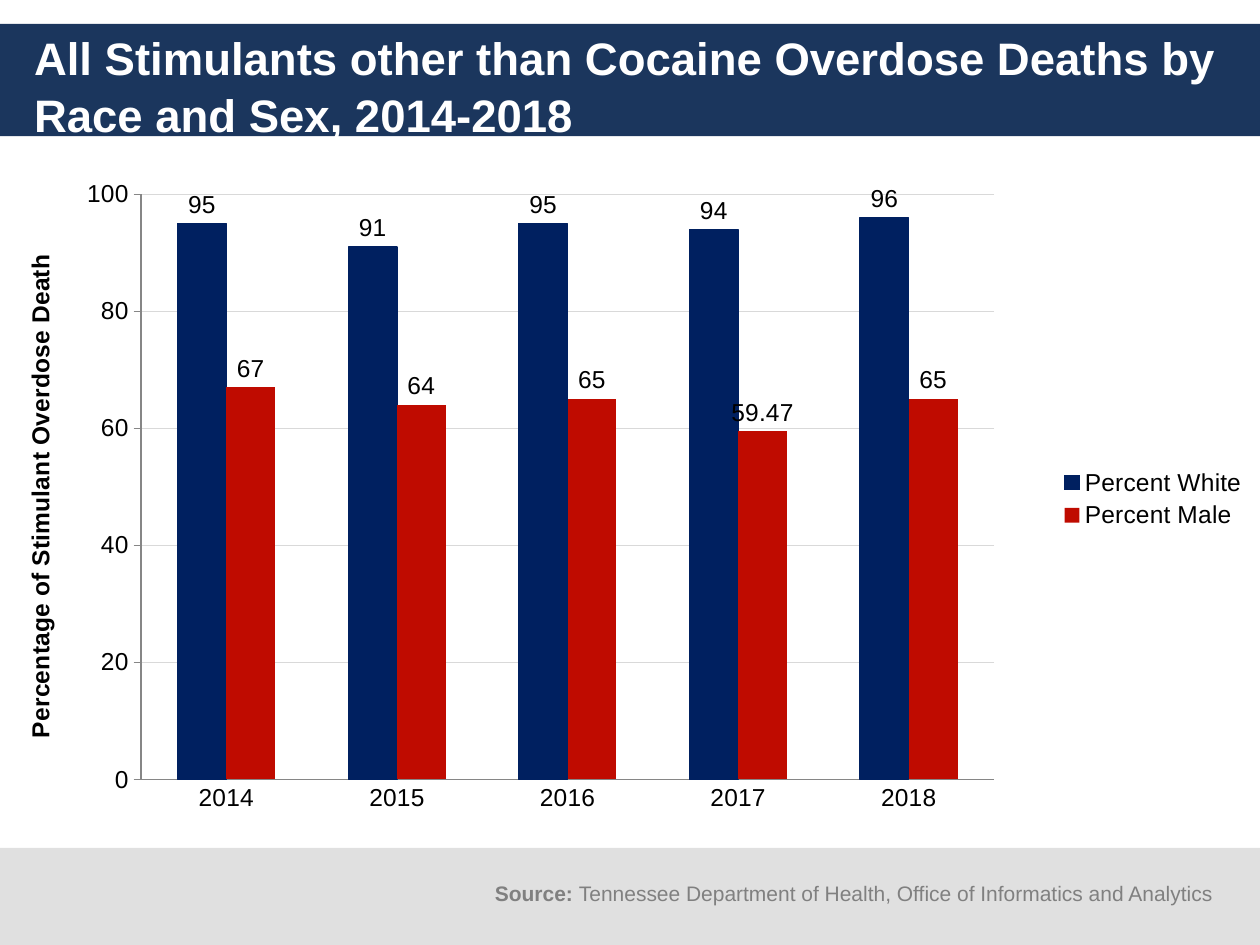
import pptx
import pptx.chart.data
import pptx.dml.color
import pptx.enum.chart
import pptx.enum.shapes
import pptx.enum.text
import pptx.oxml
import pptx.oxml.ns
import pptx.util
from pptx.util import Inches

FONT = "Arial"
NAVY, GREY, AXIS = "1B365D", "E0E0E0", "868686"
YEARS = ["2014", "2015", "2016", "2017", "2018"]
SERIES = [
    ("Percent White", [95, 91, 95, 94, 96], "002060"),
    ("Percent Male", [67, 64, 65, 59.47, 65], "BF0B00"),
]


def color(value):
    return pptx.dml.color.RGBColor.from_string(value)


def style_font(font, size=14, fill="000000", bold=False):
    font.name = FONT
    font.size = pptx.util.Pt(size)
    font.bold = bold
    font.color.rgb = color(fill)


def add_text(paragraph, text, **style):
    run = paragraph.add_run()
    run.text = text
    style_font(run.font, **style)


def style_line(line, fill, width=0.75):
    line.color.rgb = color(fill)
    line.width = pptx.util.Pt(width)


def add_band(slide, box, fill):
    band = slide.shapes.add_shape(pptx.enum.shapes.MSO_SHAPE.RECTANGLE, *box)
    band.shadow.inherit = False
    band.fill.solid()
    band.fill.fore_color.rgb = color(fill)
    band.line.fill.background()
    return band


def add_header(slide, box):
    left, top, width, height = box
    band = add_band(slide, box, NAVY)
    title = slide.shapes.title
    title.element.addprevious(band.element)  # band lies behind the title
    title.left, title.top = left + Inches(0.17), top + Inches(0.03)
    title.width, title.height = width - Inches(0.17), Inches(0.9)
    frame = title.text_frame
    frame.word_wrap = True
    frame.auto_size = pptx.enum.text.MSO_AUTO_SIZE.NONE
    frame.vertical_anchor = pptx.enum.text.MSO_ANCHOR.MIDDLE
    paragraph = frame.paragraphs[0]
    paragraph.alignment = pptx.enum.text.PP_ALIGN.LEFT
    paragraph.line_spacing = 1.05
    add_text(
        paragraph,
        "All Stimulants other than Cocaine Overdose Deaths by Race and Sex, 2014-2018",
        size=26, fill="FFFFFF", bold=True,
    )


def set_plot_layout(chart, x, y, width, height):
    plot_area = chart.plots[0]._element.getparent()
    for old in plot_area.findall(pptx.oxml.ns.qn("c:layout")):
        plot_area.remove(old)
    plot_area.insert(0, pptx.oxml.parse_xml(
        f'<c:layout {pptx.oxml.ns.nsdecls("c")}><c:manualLayout>'
        '<c:layoutTarget val="inner"/><c:xMode val="edge"/><c:yMode val="edge"/>'
        f'<c:x val="{x}"/><c:y val="{y}"/><c:w val="{width}"/><c:h val="{height}"/>'
        '</c:manualLayout></c:layout>'
    ))


def add_death_chart(slide, box):
    data = pptx.chart.data.CategoryChartData()
    data.categories = YEARS
    for name, values, _ in SERIES:
        data.add_series(name, values)
    chart = slide.shapes.add_chart(
        pptx.enum.chart.XL_CHART_TYPE.COLUMN_CLUSTERED, *box, data
    ).chart
    chart.has_title = False
    style_font(chart.font, size=18)
    set_plot_layout(chart, 0.112, 0.054, 0.677, 0.857)

    # Columns and their labels
    plot = chart.plots[0]
    plot.gap_width = 150
    plot.overlap = 0
    plot.vary_by_categories = False
    for series, (_, _, fill) in zip(plot.series, SERIES):
        series.format.fill.solid()
        series.format.fill.fore_color.rgb = color(fill)
        labels = series.data_labels
        labels.show_value = True
        labels.position = pptx.enum.chart.XL_LABEL_POSITION.OUTSIDE_END
        style_font(labels.font)
    style_line(plot.series[0].format.line, SERIES[0][2])

    # Axes
    tick_mark = pptx.enum.chart.XL_TICK_MARK
    for axis, mark in ((chart.category_axis, tick_mark.NONE),
                       (chart.value_axis, tick_mark.OUTSIDE)):
        axis.major_tick_mark = mark
        axis.minor_tick_mark = tick_mark.NONE
        style_font(axis.tick_labels.font)
        style_line(axis.format.line, AXIS)
    axis = chart.value_axis
    axis.minimum_scale, axis.maximum_scale, axis.major_unit = 0, 100, 20
    axis.tick_labels.number_format = "0"
    axis.tick_labels.number_format_is_linked = False
    axis.has_major_gridlines = True
    style_line(axis.major_gridlines.format.line, "D9D9D9")
    add_text(axis.axis_title.text_frame.paragraphs[0],
             "Percentage of Stimulant Overdose Death", bold=True)

    # Legend
    chart.has_legend = True
    chart.legend.position = pptx.enum.chart.XL_LEGEND_POSITION.RIGHT
    chart.legend.include_in_layout = False
    style_font(chart.legend.font)


def add_footer(slide, box):
    left, top, width, height = box
    add_band(slide, box, GREY)
    source = slide.shapes.add_textbox(
        left + Inches(3.83), top + Inches(0.21), Inches(6), Inches(0.3))
    source.text_frame.word_wrap = True
    paragraph = source.text_frame.paragraphs[0]
    add_text(paragraph, "Source: ", size=12, fill="808080", bold=True)
    add_text(paragraph,
             "Tennessee Department of Health, Office of Informatics and Analytics",
             size=12, fill="808080")


def main():
    presentation = pptx.Presentation()
    presentation.slide_width = Inches(10)
    presentation.slide_height = Inches(7.5)
    slide = presentation.slides.add_slide(presentation.slide_layouts[5])
    width = presentation.slide_width
    add_header(slide, (0, Inches(0.19), width, Inches(0.89)))
    add_death_chart(slide, (0, Inches(1.25), width, Inches(5.42)))
    add_footer(slide, (0, Inches(6.73), width, Inches(0.77)))
    presentation.save("out.pptx")


if __name__ == "__main__":
    main()
